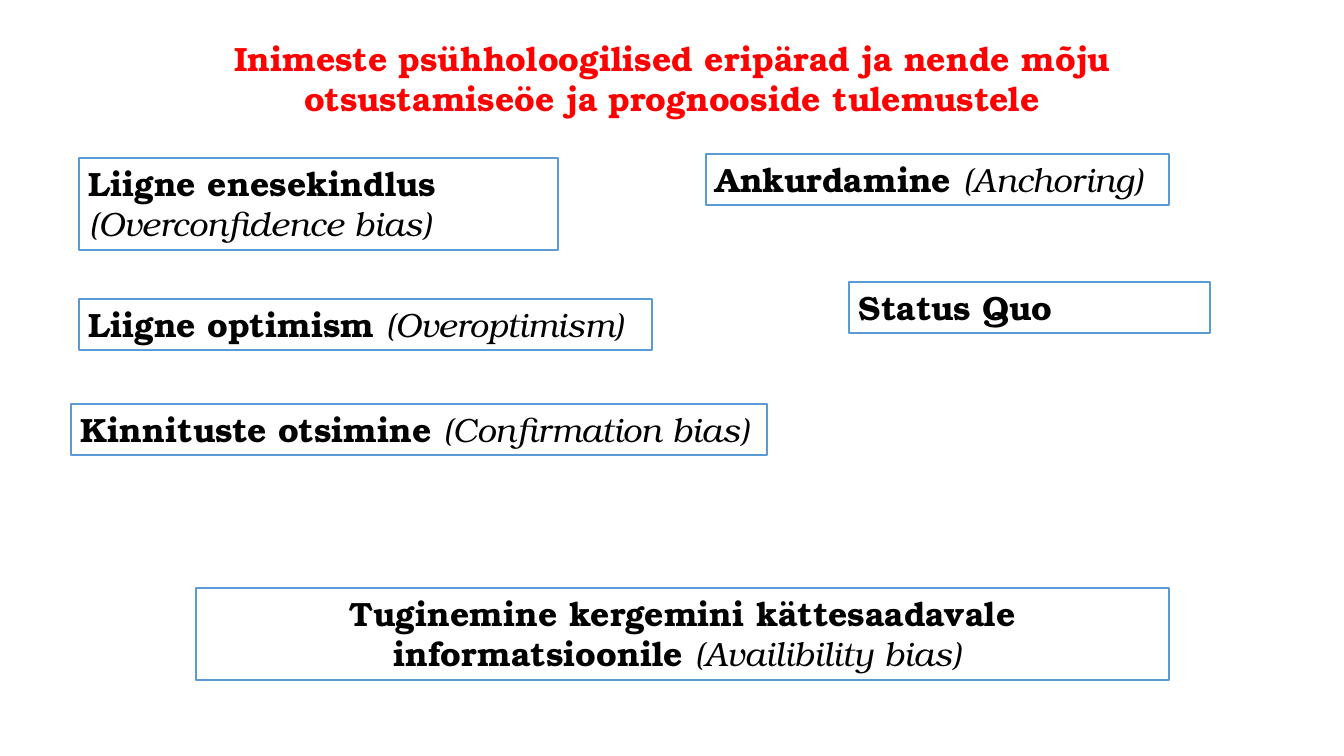
"""Builds a slide on psychological biases that affect decisions and forecasts."""
from pptx import Presentation
from pptx.dml.color import RGBColor
from pptx.enum.shapes import MSO_SHAPE
from pptx.enum.text import MSO_ANCHOR, MSO_AUTO_SIZE, PP_ALIGN
from pptx.util import Emu, Pt

FONT = "TeX Gyre Bonum"
RED, BLACK, WHITE, BLUE = "FF0000", "000000", "FFFFFF", "5B9BD5"
LEFT, CENTER, JUSTIFY = PP_ALIGN.LEFT, PP_ALIGN.CENTER, PP_ALIGN.JUSTIFY
TOP, MIDDLE = MSO_ANCHOR.TOP, MSO_ANCHOR.MIDDLE

SLIDE_SIZE = (1344, 756)
TITLE = "Inimeste psühholoogilised eripärad ja nende mõju otsustamiseöe ja prognooside tulemustele"
TITLE_BOX = (168, 33, 1008, 92)
BIASES = [
    ("Liigne optimism ", "(Overoptimism)", (79, 299, 573, 51), LEFT, TOP),
    ("Liigne enesekindlus ", "(Overconfidence bias)", (79, 158, 479, 92), LEFT, TOP),
    ("Kinnituste otsimine ", "(Confirmation bias)", (71, 404, 696, 51), LEFT, TOP),
    ("Tuginemine kergemini kättesaadavale informatsioonile ", "(Availibility bias) ",
     (196, 588, 973, 92), CENTER, TOP),
    ("Ankurdamine ", "(Anchoring)", (706, 154, 463, 51), LEFT, TOP),
    ("Status Quo", "", (849, 282, 361, 51), JUSTIFY, MIDDLE),
]


def px(length):
    return Emu(round(length * 914400 / 100.8))


def color(value):
    return RGBColor.from_string(value)


def write(shape, name, term, ink, align, anchor):
    frame = shape.text_frame
    frame.word_wrap = True
    frame.auto_size = MSO_AUTO_SIZE.SHAPE_TO_FIT_TEXT
    frame.vertical_anchor = anchor
    paragraph = frame.paragraphs[0]
    paragraph.alignment = align
    for words, is_term in ((name, False), (term, True)):
        if words:
            run = paragraph.add_run()
            run.text = words
            run.font.name = FONT
            run.font.size = Pt(24)
            run.font.bold = not is_term
            run.font.italic = is_term
            run.font.color.rgb = color(ink)


def main():
    deck = Presentation()
    deck.slide_width, deck.slide_height = map(px, SLIDE_SIZE)
    slide = deck.slides.add_slide(deck.slide_layouts[6])

    title = slide.shapes.add_textbox(*map(px, TITLE_BOX))
    write(title, TITLE, "", RED, CENTER, TOP)

    for name, term, box, align, anchor in BIASES:
        bias = slide.shapes.add_shape(MSO_SHAPE.RECTANGLE, *map(px, box))
        bias.shadow.inherit = False
        bias.fill.solid()
        bias.fill.fore_color.rgb = color(WHITE)
        bias.line.color.rgb = color(BLUE)
        bias.line.width = Pt(1)
        write(bias, name, term, BLACK, align, anchor)

    deck.save("out.pptx")


if __name__ == "__main__":
    main()
